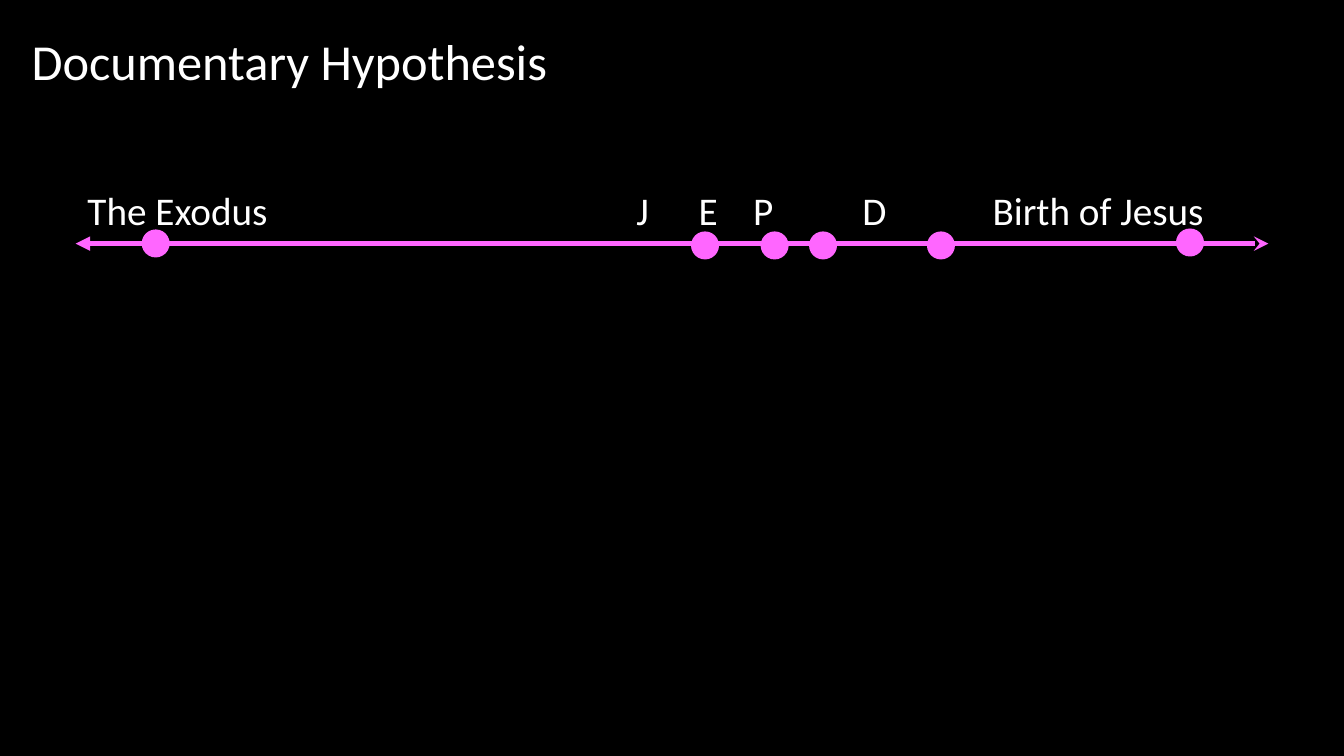
"""Build the Documentary Hypothesis timeline slide."""
from dataclasses import dataclass

from lxml import etree
from pptx import Presentation
from pptx.dml.color import RGBColor
from pptx.enum import shapes, text
from pptx.oxml import ns
from pptx.util import Pt


@dataclass(frozen=True)
class Theme:
    back: RGBColor = RGBColor(0, 0, 0)
    ink: RGBColor = RGBColor(255, 255, 255)
    pink: RGBColor = RGBColor(255, 102, 255)
    font: str = "Calibri"
    head: int = 36
    label: int = 28


class Board:
    def __init__(self, slide, theme):
        self.slide, self.theme = slide, theme
        fill = slide.background.fill
        fill.solid()
        fill.fore_color.rgb = theme.back

    def letter(self, box, words, size):
        frame = box.text_frame
        frame.word_wrap = True
        frame.auto_size = text.MSO_AUTO_SIZE.NONE
        frame.vertical_anchor = text.MSO_ANCHOR.TOP
        frame.margin_left = frame.margin_right = 0
        frame.margin_top = frame.margin_bottom = 0
        frame.text = words
        para = frame.paragraphs[0]
        para.alignment = text.PP_ALIGN.LEFT
        font = para.font
        font.name, font.size = self.theme.font, Pt(size)
        font.color.rgb = self.theme.ink

    def title(self, words, left, top, width, height):
        box = self.slide.shapes.title
        box.left, box.top = Pt(left), Pt(top)
        box.width, box.height = Pt(width), Pt(height)
        self.letter(box, words, self.theme.head)

    def label(self, words, left, top, width, height):
        box = self.slide.shapes.add_textbox(
            Pt(left), Pt(top), Pt(width), Pt(height))
        self.letter(box, words, self.theme.label)

    def axis(self, left, right, y):
        line = self.slide.shapes.add_connector(
            shapes.MSO_CONNECTOR.STRAIGHT, Pt(left), Pt(y), Pt(right), Pt(y))
        line.line.color.rgb = self.theme.pink
        line.line.width = Pt(3.5)
        props = line.element.spPr
        stroke = props.find(ns.qn("a:ln"))
        for end, kind in (("headEnd", "triangle"), ("tailEnd", "stealth")):
            etree.SubElement(stroke, ns.qn(f"a:{end}"), type=kind)
        etree.SubElement(props, ns.qn("a:effectLst"))

    def dot(self, left, top, size=18):
        dot = self.slide.shapes.add_shape(
            shapes.MSO_SHAPE.OVAL, Pt(left), Pt(top), Pt(size), Pt(size))
        dot.shadow.inherit = False
        dot.fill.solid()
        dot.fill.fore_color.rgb = self.theme.pink
        dot.line.color.rgb = self.theme.pink
        dot.line.width = Pt(2)


EVENTS = [
    ("The Exodus", 62.5, 150, 102.2, 164.9),
    ("J", 454.5, 30, 494.6, 166.3),
    ("E", 499, 30, 544.3, 166.3),
    ("P", 538, 30, 578.9, 166.3),
    ("D", 616, 30, 663.1, 166.3),
    ("Birth of Jesus", 709, 180, 841, 164.2),
]


def main():
    deck = Presentation()
    deck.slide_width, deck.slide_height = Pt(960), Pt(540)
    board = Board(deck.slides.add_slide(deck.slide_layouts[5]), Theme())
    board.title("Documentary Hypothesis", 22.5, 21.6, 900, 46)
    board.axis(54, 906, 174)
    for words, left, width, spot, top in EVENTS:
        board.label(words, left, 133.4, width, 35)
        board.dot(spot, top)
    deck.save("out.pptx")


if __name__ == "__main__":
    main()
